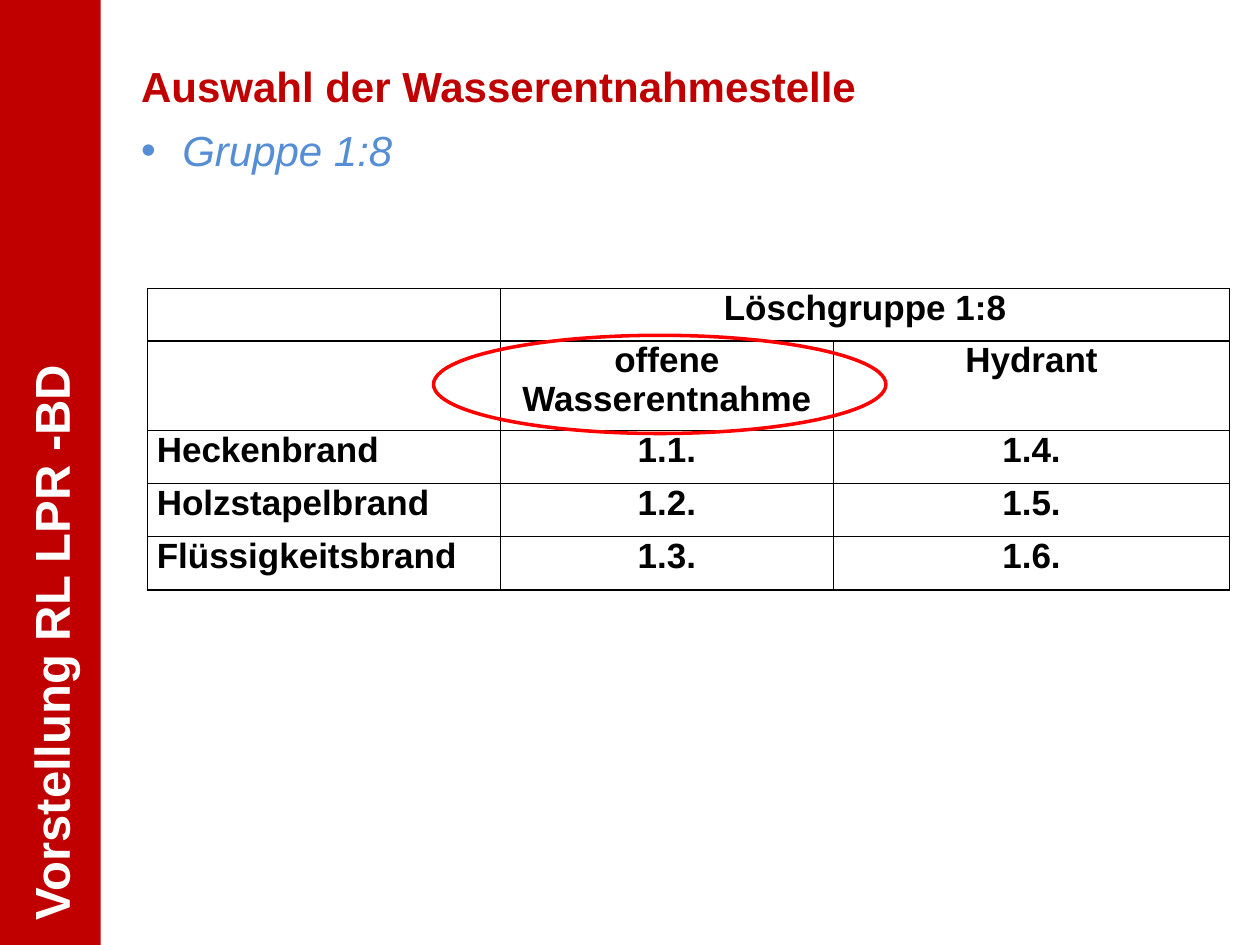
import pptx
import pptx.util
import pptx.dml.color
import pptx.enum.shapes
import pptx.enum.text
import pptx.oxml.ns
import lxml.etree

Cm = pptx.util.Cm
Pt = pptx.util.Pt
ALIGN = pptx.enum.text.PP_ALIGN
ANCHOR = pptx.enum.text.MSO_ANCHOR
SHAPE = pptx.enum.shapes.MSO_SHAPE

RED, WHITE, BLACK = "C00000", "FFFFFF", "000000"
BAR = "Vorstellung RL LPR -BD"
TITLE = "Auswahl der Wasserentnahmestelle"
GROUP = "Gruppe 1:8"
ROWS = [
    ("", "Löschgruppe 1:8", ""),
    ("", "offene Wasserentnahme", "Hydrant"),
    ("Heckenbrand", "1.1.", "1.4."),
    ("Holzstapelbrand", "1.2.", "1.5."),
    ("Flüssigkeitsbrand", "1.3.", "1.6."),
]
WIDTHS = (7.12, 6.71, 7.99)
HEIGHTS = (1.05, 1.81, 1.07, 1.07, 1.07)
STYLES = {
    "bar": {"size": Pt(28), "bold": True, "italic": False},
    "title": {"size": Pt(24), "bold": True, "italic": False},
    "group": {"size": Pt(24), "bold": False, "italic": True},
    "cell": {"size": Pt(20), "bold": True, "italic": False},
}


def tint(hue):
    return pptx.dml.color.RGBColor.from_string(hue)


def place(shape, left, top, width, height):
    for name, size in zip(("left", "top", "width", "height"),
                          (left, top, width, height)):
        setattr(shape, name, Cm(size))


def write(frame, text, style, hue, align=ALIGN.LEFT):
    para = frame.paragraphs[0]
    para.alignment = align
    para.space_before = Pt(0)
    run = para.add_run()
    run.text = text
    run.font.name = "Arial"
    run.font.color.rgb = tint(hue)
    for name, value in STYLES[style].items():
        setattr(run.font, name, value)
    return para


def fill_holder(holder, top, text, style, hue):
    place(holder, 2.59, top, 22.23, 1.3)
    frame = holder.text_frame
    frame.auto_size = pptx.enum.text.MSO_AUTO_SIZE.NONE
    frame.vertical_anchor = ANCHOR.TOP
    return write(frame, text, style, hue)


def edge(cell):
    props = cell._tc.get_or_add_tcPr()
    for side in ("lnL", "lnR", "lnT", "lnB"):
        line = lxml.etree.SubElement(props, pptx.oxml.ns.qn("a:" + side), w=str(Pt(1)))
        paint = lxml.etree.SubElement(line, pptx.oxml.ns.qn("a:solidFill"))
        lxml.etree.SubElement(paint, pptx.oxml.ns.qn("a:srgbClr"), val=BLACK)


def add_bar(slide):
    length, thick = 19.05, 2.03
    bar = slide.shapes.add_shape(SHAPE.RECTANGLE, 0, 0, 0, 0)
    place(bar, (thick - length) / 2, (length - thick) / 2, length, thick)
    bar.rotation = 270
    bar.shadow.inherit = False
    bar.fill.solid()
    bar.fill.fore_color.rgb = tint(RED)
    bar.line.fill.background()
    bar.text_frame.margin_left = Cm(0.5)
    bar.text_frame.vertical_anchor = ANCHOR.MIDDLE
    write(bar.text_frame, BAR, "bar", WHITE)


def add_grid(slide):
    table = slide.shapes.add_table(
        len(ROWS), len(WIDTHS), Cm(2.97), Cm(5.82),
        Cm(sum(WIDTHS)), Cm(sum(HEIGHTS))).table
    table.first_row = table.horz_banding = False
    for col, width in zip(table.columns, WIDTHS):
        col.width = Cm(width)
    for row, height in zip(table.rows, HEIGHTS):
        row.height = Cm(height)
    table.cell(0, 1).merge(table.cell(0, 2))
    for r, row in enumerate(ROWS):
        for c, text in enumerate(row):
            cell = table.cell(r, c)
            edge(cell)
            cell.fill.background()
            cell.margin_left = cell.margin_right = Cm(0.19)
            cell.margin_top = cell.margin_bottom = 0
            if text:
                write(cell.text_frame, text, "cell", BLACK,
                      ALIGN.CENTER if c else ALIGN.LEFT)


def add_ring(slide):
    ring = slide.shapes.add_shape(SHAPE.OVAL, 0, 0, 0, 0)
    place(ring, 8.74, 6.76, 9.12, 1.98)
    ring.shadow.inherit = False
    ring.fill.background()
    ring.line.color.rgb = tint("FF0000")
    ring.line.width = Pt(2)


def main():
    deck = pptx.Presentation()
    deck.slide_width, deck.slide_height = Cm(25.4), Cm(19.05)
    slide = deck.slides.add_slide(deck.slide_layouts[1])
    title, body = slide.placeholders
    fill_holder(title, 1.09, TITLE, "title", RED)
    para = fill_holder(body, 2.39, GROUP, "group", "558ED5")
    props = para._p.get_or_add_pPr()
    props.set("marL", str(Cm(0.83)))
    props.set("indent", str(-Cm(0.83)))
    lxml.etree.SubElement(props, pptx.oxml.ns.qn("a:buChar"), char="•")
    add_bar(slide)
    add_grid(slide)
    add_ring(slide)
    deck.save("out.pptx")


if __name__ == "__main__":
    main()
